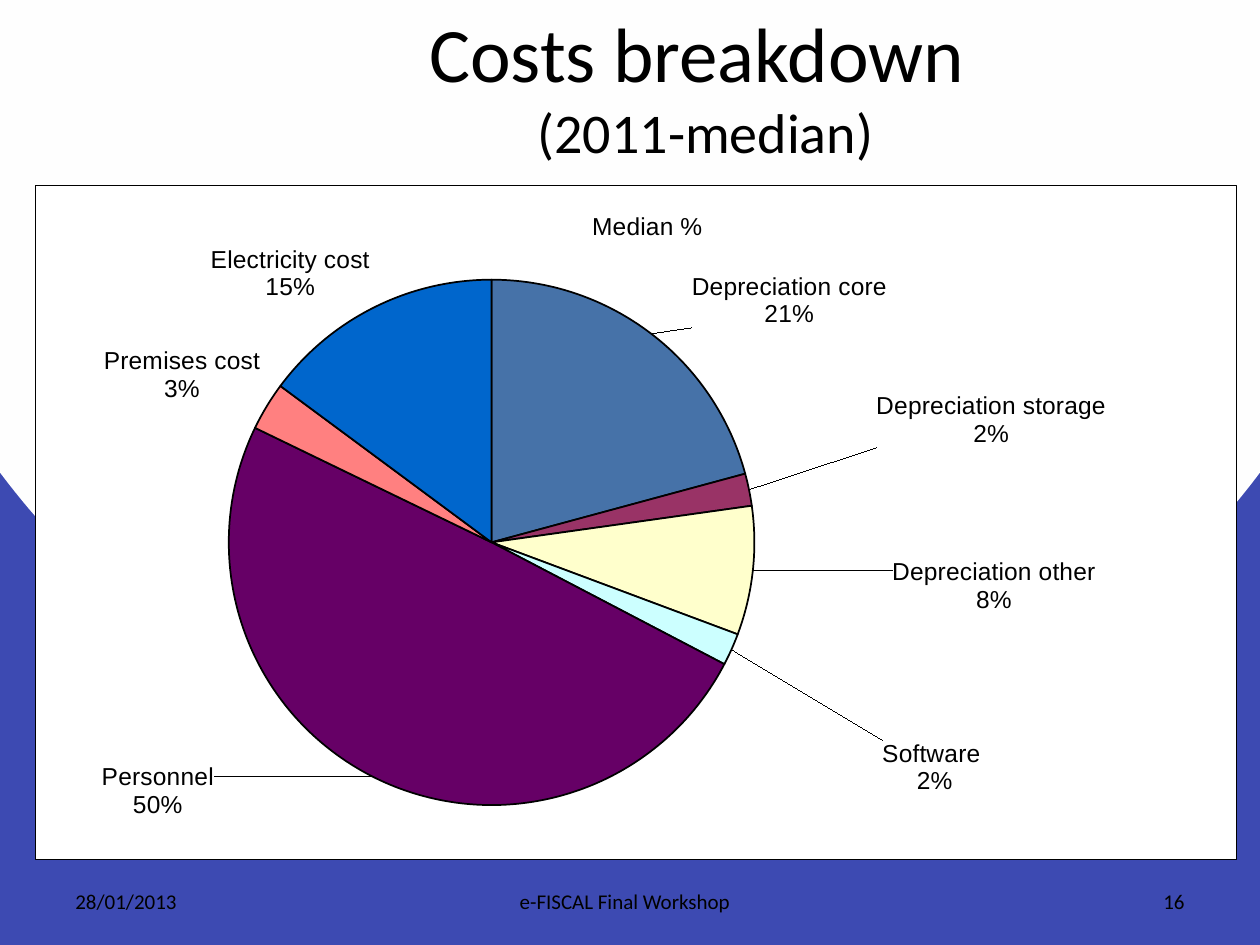
from pptx import Presentation
from pptx.chart.data import CategoryChartData
from pptx.dml.color import RGBColor
from pptx.enum.chart import XL_CHART_TYPE
from pptx.enum.text import MSO_ANCHOR, PP_ALIGN
from pptx.oxml import parse_xml
from pptx.oxml.ns import qn
from pptx.util import Inches, Pt

NS = ('xmlns:a="http://schemas.openxmlformats.org/drawingml/2006/main" '
      'xmlns:c="http://schemas.openxmlformats.org/drawingml/2006/chart"')
EDGE = '<c:xMode val="edge"/><c:yMode val="edge"/>'
COSTS = [
    ("Depreciation core", 21, "4672A8"),
    ("Depreciation storage", 2, "993366"),
    ("Depreciation other", 8, "FFFFCC"),
    ("Software ", 2, "CCFFFF"),
    ("Personnel", 50, "660066"),
    ("Premises cost", 3, "FF8080"),
    ("Electricity cost", 15, "0066CC"),
]
LABEL_OFFSETS = [(0.03, 0), (0.1, -0.06), (0.11, -0.02), (0.12, 0.13), (-0.13, -0.03)]
LABEL_STYLE = (
    '<c:numFmt formatCode="0%" sourceLinked="0"/><c:spPr><a:noFill/></c:spPr>'
    '<c:txPr><a:bodyPr/><a:p><a:pPr><a:defRPr sz="1400" b="0">'
    '<a:solidFill><a:srgbClr val="000000"/></a:solidFill><a:latin typeface="Arial"/>'
    '</a:defRPr></a:pPr><a:endParaRPr/></a:p></c:txPr><c:dLblPos val="outEnd"/>'
    '<c:showLegendKey val="0"/><c:showVal val="0"/><c:showCatName val="1"/>'
    '<c:showSerName val="0"/><c:showPercent val="1"/><c:showBubbleSize val="0"/>'
    '<c:separator>\n</c:separator>')


def color(value):
    return RGBColor.from_string(value)


def layout_xml(x, y, before="", after=""):
    return (f'<c:layout {NS}><c:manualLayout>{before}<c:x val="{x}"/><c:y val="{y}"/>'
            f'{after}</c:manualLayout></c:layout>')


def clear_layout(parent):
    for old in parent.findall(qn("c:layout")):
        parent.remove(old)


def set_background(s):
    s.background.fill.gradient()
    stops = [(0, "FFFFFF"), (100, "FEFEFE"), (100, "3D4AB2")]
    stop_xml = "".join(f'<a:gs pos="{pos * 1000}"><a:srgbClr val="{c}"/></a:gs>'
                       for pos, c in stops)
    grad = s.element.find(".//" + qn("a:gradFill"))
    grad.getparent().replace(grad, parse_xml(
        f'<a:gradFill {NS} rotWithShape="0"><a:gsLst>{stop_xml}</a:gsLst>'
        '<a:path path="circle"><a:fillToRect l="50000" t="-80000" r="50000" b="180000"/>'
        '</a:path></a:gradFill>'))


def add_text(s, box, lines, align):
    sp = s.shapes.add_textbox(*map(Inches, box))
    tf = sp.text_frame
    tf.word_wrap = True
    tf.vertical_anchor = MSO_ANCHOR.MIDDLE
    p = tf.paragraphs[0]
    p.alignment = align
    p.font.name = "Calibri"
    p.font.color.rgb = color("000000")
    for i, (text, size) in enumerate(lines):
        if i:
            p.add_line_break()
        r = p.add_run()
        r.text = text
        r.font.size = Pt(size)


def style_title(chart):
    tf = chart.chart_title.text_frame
    tf.text = "Median %"
    font = tf.paragraphs[0].font
    font.name, font.size, font.bold = "Arial", Pt(14), False
    font.color.rgb = color("000000")
    title = chart.element.find(".//" + qn("c:title"))
    clear_layout(title)
    title.find(qn("c:tx")).addnext(parse_xml(layout_xml(0.46, 0.03, EDGE)))


def style_frame(chart):
    plot_area = chart.element.find(".//" + qn("c:plotArea"))
    clear_layout(plot_area)
    plot_area.insert(0, parse_xml(layout_xml(
        0.16, 0.14, '<c:layoutTarget val="inner"/>' + EDGE,
        '<c:w val="0.44"/><c:h val="0.78"/>')))
    chart.element.find(qn("c:chart")).addnext(parse_xml(
        f'<c:spPr {NS}><a:solidFill><a:srgbClr val="FFFFFF"/></a:solidFill>'
        '<a:ln w="3175"><a:solidFill><a:srgbClr val="000000"/></a:solidFill></a:ln></c:spPr>'))


def add_labels(series):
    moved = "".join(f'<c:dLbl><c:idx val="{i}"/>{layout_xml(x, y)}{LABEL_STYLE}</c:dLbl>'
                    for i, (x, y) in enumerate(LABEL_OFFSETS))
    labels = parse_xml(f'<c:dLbls {NS}>{moved}{LABEL_STYLE}'
                       '<c:showLeaderLines val="1"/></c:dLbls>')
    series._element.find(qn("c:cat")).addprevious(labels)


def add_pie(s, box):
    data = CategoryChartData()
    data.categories = [name for name, _, _ in COSTS]
    data.add_series("Median %", [value for _, value, _ in COSTS])
    chart = s.shapes.add_chart(XL_CHART_TYPE.PIE, *map(Inches, box), data).chart
    chart.has_legend = False
    chart.font.name, chart.font.size = "Arial", Pt(8)
    chart.font.color.rgb = color("000000")
    style_title(chart)
    chart.plots[0].vary_by_categories = True
    series = chart.plots[0].series[0]
    for i, (_, _, fill) in enumerate(COSTS):
        fmt = series.points[i].format
        fmt.fill.solid()
        fmt.fill.fore_color.rgb = color(fill)
        fmt.line.color.rgb = color("000000")
        fmt.line.width = Pt(1)
    add_labels(series)
    style_frame(chart)


def main():
    prs = Presentation()
    prs.slide_width, prs.slide_height = Inches(10), Inches(7.5)
    s = prs.slides.add_slide(prs.slide_layouts[6])
    set_background(s)
    add_text(s, (1.7, 0.05, 7.8, 1.25),
             [("Costs breakdown ", 44), ("(2011-median)", 32)], PP_ALIGN.CENTER)
    for left, width, text, align in [
        (0.5, 2.33, "28/01/2013", PP_ALIGN.LEFT),
        (3.11, 3.7, "e-FISCAL Final Workshop", PP_ALIGN.CENTER),
        (7.17, 2.33, "16", PP_ALIGN.RIGHT),
    ]:
        add_text(s, (left, 6.95, width, 0.4), [(text, 12)], align)
    add_pie(s, (0.28, 1.47, 9.53, 5.35))
    prs.save("out.pptx")


if __name__ == "__main__":
    main()
